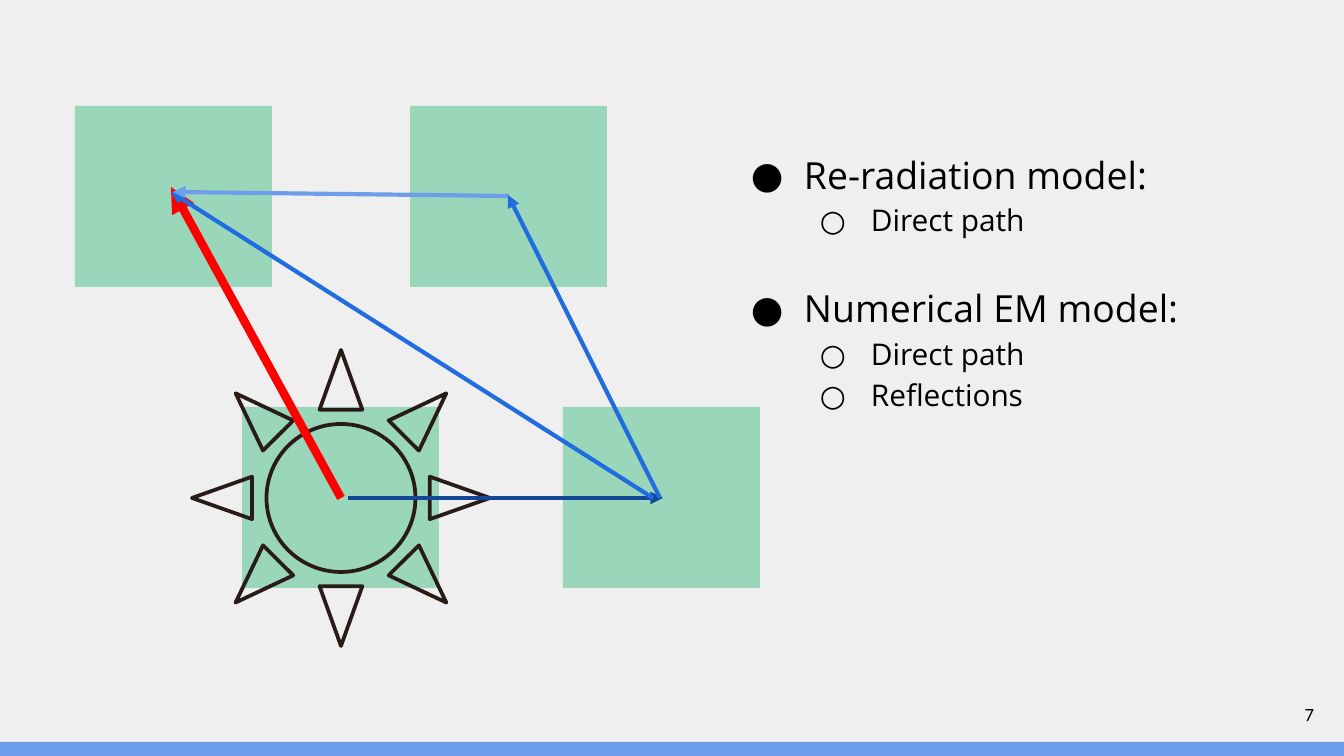
from lxml.etree import SubElement
from pptx import Presentation
from pptx.dml.color import RGBColor
from pptx.enum.shapes import MSO_CONNECTOR as Connector, MSO_SHAPE as Shape
from pptx.enum.text import MSO_ANCHOR as Anchor, PP_ALIGN as Align
from pptx.oxml.ns import qn
from pptx.util import Emu, Pt

PX = 914400 / 134.4
COLORS = {
    "background": "EFEFEF", "footer": "6D9EEB", "square": "9AD6B9",
    "sun": "291C18", "text": "000000", "direct": "FF0000",
    "outgoing": "154797", "bounce": "216CE1", "echo": "6D9EEB",
}
SQUARE_SIZE = (197, 181)
SQUARES = [(75, 106), (410, 106), (242, 407), (563, 407)]
PATHS = [  # start, end, color, width in points
    ((341, 498), (171, 187), "direct", 4.5),
    ((348, 498), (663, 498), "outgoing", 2.25),
    ((653, 498), (171, 192), "bounce", 2.25),
    ((509, 196), (173, 192), "echo", 2.25),
    ((660, 498), (508, 195), "bounce", 2.25),
]
LEVELS = [  # bullet, size in points, left indent and hanging indent in px
    ("●", 20, 67, 53),
    ("○", 16, 134, 51),
]
MODELS = [  # level, text, space before in points
    (0, "Re-radiation model:", 0),
    (1, "Direct path", 0),
    (0, "Numerical EM model:", 22),
    (1, "Direct path", 0),
    (1, "Reflections", 0),
]


def px(value):
    return Emu(round(value * PX))


def color(name):
    return RGBColor.from_string(COLORS[name])


def apply(target, **values):
    for name, value in values.items():
        setattr(target, name, value)


class Page:
    def __init__(self, deck):
        self.slide = deck.slides.add_slide(deck.slide_layouts[6])
        fill = self.slide.background.fill
        fill.solid()
        fill.fore_color.rgb = color("background")

    def shape(self, kind, bounds, fill=None, line=None, width=2):
        shape = self.slide.shapes.add_shape(kind, *map(px, bounds))
        shape.shadow.inherit = False
        if fill:
            shape.fill.solid()
            shape.fill.fore_color.rgb = color(fill)
        else:
            shape.fill.background()
        if line:
            shape.line.color.rgb = color(line)
            shape.line.width = Pt(width)
        else:
            shape.line.fill.background()

    def arrow(self, start, end, line, width):
        arrow = self.slide.shapes.add_connector(
            Connector.STRAIGHT, *map(px, start + end))
        arrow.line.color.rgb = color(line)
        arrow.line.width = Pt(width)
        SubElement(arrow.line._get_or_add_ln(), qn("a:tailEnd"), type="triangle")
        SubElement(arrow._element.spPr, qn("a:effectLst"))

    def text_box(self, bounds, anchor=Anchor.TOP):
        frame = self.slide.shapes.add_textbox(*map(px, bounds)).text_frame
        inset = px(13)
        apply(frame, word_wrap=True, vertical_anchor=anchor,
              margin_left=inset, margin_right=inset,
              margin_top=inset, margin_bottom=inset)
        return frame

    def span(self, para, text, font, size):
        span = para.add_run()
        span.text = text
        apply(span.font, name=font, size=Pt(size))
        span.font.color.rgb = color("text")

    def bullets(self, bounds, items):
        frame = self.text_box(bounds)
        for index, (level, text, space) in enumerate(items):
            para = frame.add_paragraph() if index else frame.paragraphs[0]
            bullet, size, left, hanging = LEVELS[level]
            apply(para, level=level, line_spacing=1.15, space_before=Pt(space))
            properties = para._p.get_or_add_pPr()
            properties.set("marL", str(px(left)))
            properties.set("indent", str(-px(hanging)))
            bullet_color = SubElement(properties, qn("a:buClr"))
            SubElement(bullet_color, qn("a:srgbClr"), val=COLORS["text"])
            SubElement(properties, qn("a:buSzPct"), val="100000")
            SubElement(properties, qn("a:buFont"), typeface="Open Sans")
            SubElement(properties, qn("a:buChar"), char=bullet)
            self.span(para, text, "Open Sans", size)

    def number(self, bounds, text):
        para = self.text_box(bounds, Anchor.MIDDLE).paragraphs[0]
        para.alignment = Align.RIGHT
        self.span(para, text, "Calibri", 10)


def main():
    deck = Presentation()
    apply(deck, slide_width=px(1344), slide_height=px(756))
    page = Page(deck)
    page.shape(Shape.RECTANGLE, (0, 742, 1344, 14), fill="footer")
    page.number((1246, 685, 81, 58), "7")
    page.bullets((724, 132, 574, 493), MODELS)
    for corner in SQUARES:
        page.shape(Shape.RECTANGLE, corner + SQUARE_SIZE, fill="square")
    page.shape(Shape.SUN, (192, 350, 298, 296), line="sun")
    for path in PATHS:
        page.arrow(*path)
    deck.save("out.pptx")


if __name__ == "__main__":
    main()
